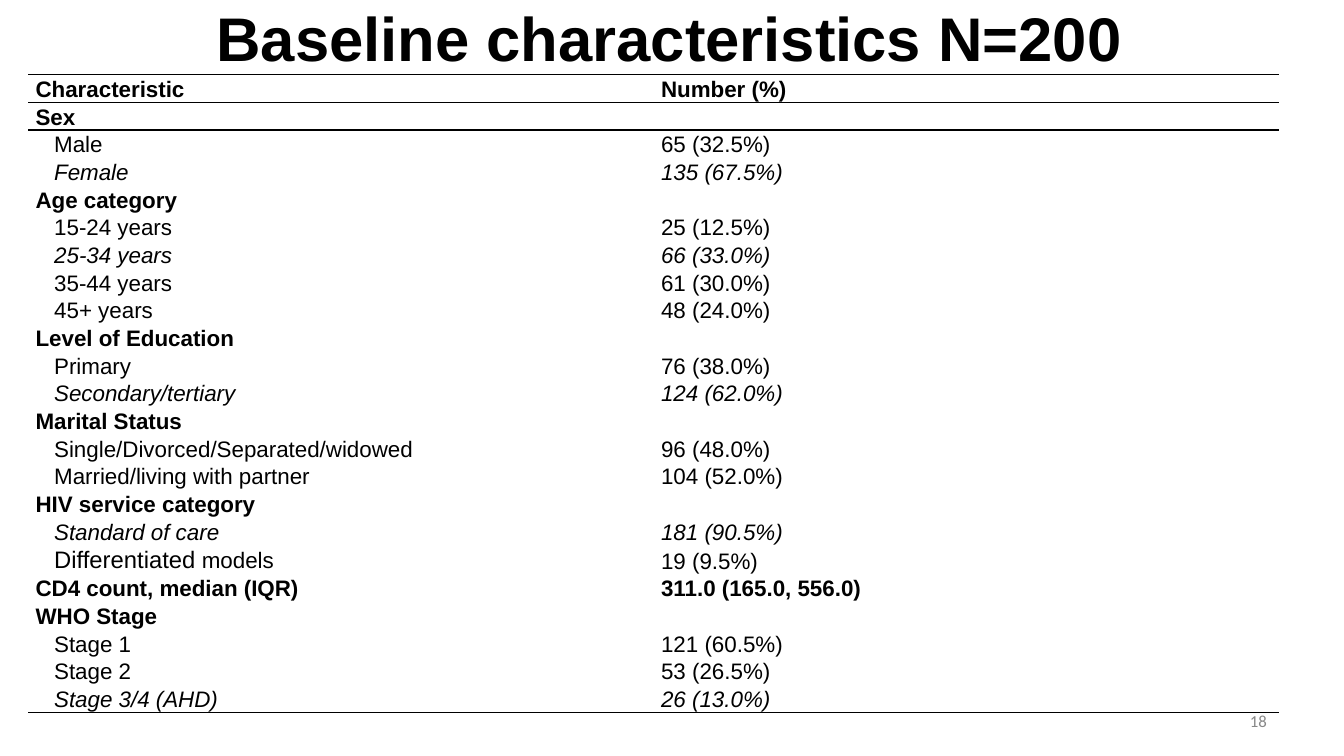
from lxml.etree import SubElement
from pptx import Presentation
from pptx.dml.color import RGBColor
from pptx.enum.text import MSO_ANCHOR as Anchor, PP_ALIGN as Align
from pptx.oxml.ns import qn
from pptx.util import Pt

TITLE = "Baseline characteristics N=200"
PAGE_NUMBER = "18"
ROWS = [
    ("bold", "Characteristic", "Number (%)"),
    ("bold", "Sex", ""),
    ("plain", "Male", "65 (32.5%)"),
    ("italic", "Female", "135 (67.5%)"),
    ("bold", "Age category", ""),
    ("plain", "15-24 years", "25 (12.5%)"),
    ("italic", "25-34 years", "66 (33.0%)"),
    ("plain", "35-44 years", "61 (30.0%)"),
    ("plain", "45+ years", "48 (24.0%)"),
    ("bold", "Level of Education", ""),
    ("plain", "Primary", "76 (38.0%)"),
    ("italic", "Secondary/tertiary", "124 (62.0%)"),
    ("bold", "Marital Status", ""),
    ("plain", "Single/Divorced/Separated/widowed", "96 (48.0%)"),
    ("plain", "Married/living with partner", "104 (52.0%)"),
    ("bold", "HIV service category", ""),
    ("italic", "Standard of care", "181 (90.5%)"),
    ("plain", [("Differentiated", 17), (" models", 16)], "19 (9.5%)"),
    ("bold", "CD4 count, median (IQR)", "311.0 (165.0, 556.0)"),
    ("bold", "WHO Stage", ""),
    ("plain", "Stage 1", "121 (60.5%)"),
    ("plain", "Stage 2", "53 (26.5%)"),
    ("italic", "Stage 3/4 (AHD)", "26 (13.0%)"),
]
LAST = len(ROWS) - 1
RULES = {0: {"lnT": 1, "lnB": 1}, 1: {"lnT": 1}, LAST: {"lnB": 1}}
COLUMN_WIDTH, ROW_HEIGHT, TEXT_SIZE, INDENT = 446.8, 19.78, 16, 13.3
CELL = {"margin_left": Pt(5.2), "margin_right": Pt(5.2), "margin_top": Pt(0.4),
        "margin_bottom": Pt(0), "vertical_anchor": Anchor.BOTTOM}
PLAIN_STYLE = "{2D5ABB26-0587-4C30-8999-92F81FD0307C}"


def apply(target, values):
    for name, value in values.items():
        setattr(target, name, value)


def paint(color, code):
    color.rgb = RGBColor.from_string(code)


def write(para, text, size, face="Arial", code="000000", bold=False, italic=False):
    span = para.add_run()
    span.text = text
    apply(span.font, {"name": face, "size": Pt(size), "bold": bold, "italic": italic})
    paint(span.font.color, code)


def draw_rule(cell, side, width):
    line = SubElement(cell._tc.get_or_add_tcPr(), qn(f"a:{side}"), w=str(Pt(width)))
    fill = SubElement(line, qn("a:solidFill"))
    SubElement(fill, qn("a:srgbClr"), val="000000")


def fill_cell(cell, content, style, indent, rules):
    apply(cell, CELL)
    cell.margin_left = CELL["margin_left"] + Pt(indent)
    for side, width in rules.items():
        draw_rule(cell, side, width)
    cell.fill.background()
    para = cell.text_frame.paragraphs[0]
    para.line_spacing = 1.0
    pieces = [(content, TEXT_SIZE)] if isinstance(content, str) else content
    for text, size in pieces:
        if text:
            write(para, text, size, bold=style == "bold", italic=style == "italic")
        else:
            SubElement(para._p, qn("a:endParaRPr"), sz=str(size * 100))


def add_title(page):
    title = page.shapes.title
    apply(title, {"left": Pt(46.3), "top": Pt(-18.7), "width": Pt(864), "height": Pt(90)})
    title.text_frame.vertical_anchor = Anchor.MIDDLE
    para = title.text_frame.paragraphs[0]
    para.alignment = Align.CENTER
    write(para, TITLE, 44, bold=True)


def add_page_number(page):
    box = page.shapes.add_textbox(Pt(688), Pt(500.4), Pt(224), Pt(28.8))
    apply(box.text_frame, {"word_wrap": True, "vertical_anchor": Anchor.MIDDLE})
    para = box.text_frame.paragraphs[0]
    para.alignment = Align.RIGHT
    write(para, PAGE_NUMBER, 12, face="Calibri", code="888888")


def add_characteristics(page):
    frame = page.shapes.add_table(len(ROWS), 2, Pt(20.2), Pt(53.3),
                                  Pt(2 * COLUMN_WIDTH), Pt(len(ROWS) * ROW_HEIGHT))
    table = frame.table
    apply(table, {"first_row": False, "horz_banding": False})
    table._tbl.tblPr.find(qn("a:tableStyleId")).text = PLAIN_STYLE
    for column in table.columns:
        column.width = Pt(COLUMN_WIDTH)
    for index, (style, label, value) in enumerate(ROWS):
        table.rows[index].height = Pt(ROW_HEIGHT)
        rules = RULES.get(index, {})
        fill_cell(table.cell(index, 0), label, style, 0 if style == "bold" else INDENT, rules)
        fill_cell(table.cell(index, 1), value, style, 0, rules)


def main():
    deck = Presentation()
    apply(deck, {"slide_width": Pt(960), "slide_height": Pt(540)})
    page = deck.slides.add_slide(deck.slide_layouts[5])
    add_title(page)
    add_page_number(page)
    add_characteristics(page)
    deck.save("out.pptx")


if __name__ == "__main__":
    main()
